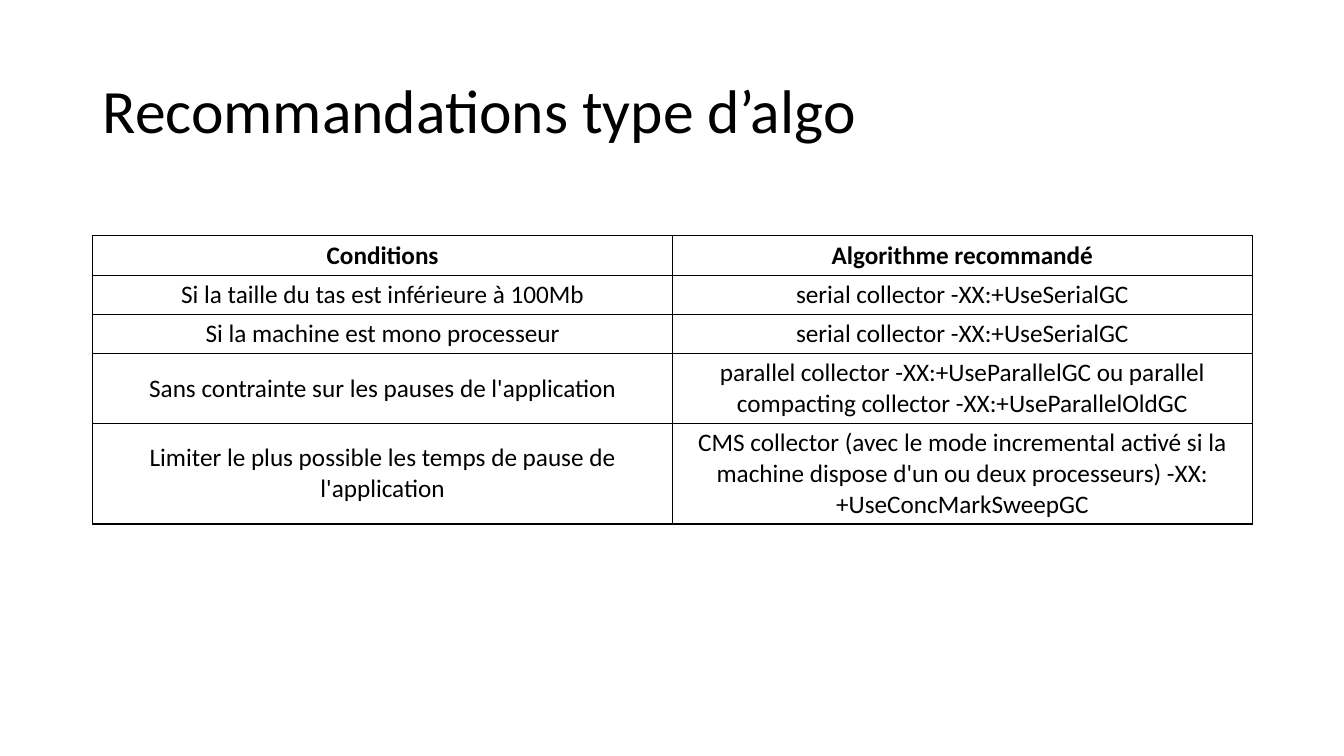
import pptx
import pptx.util
import pptx.dml.color
import pptx.enum.text
import pptx.oxml.ns
import lxml.etree
from dataclasses import dataclass

Inches = pptx.util.Inches
Pt = pptx.util.Pt


@dataclass
class Theme:
    font: str = "Calibri"
    ink: str = "000000"
    title_size: int = 44
    table_size: int = 18
    border_width: int = 1
    cell_margin: float = 0.04


class SlideBuilder:
    def __init__(self, slide, theme):
        self.slide = slide
        self.theme = theme

    def run(self, p, text, size, bold=False):
        r = p.add_run()
        r.text = text
        r.font.name = self.theme.font
        r.font.size = Pt(size)
        r.font.bold = bold
        r.font.color.rgb = pptx.dml.color.RGBColor.from_string(self.theme.ink)

    def title(self, text, left, top, width, height):
        sp = self.slide.shapes.add_textbox(
            Inches(left), Inches(top), Inches(width), Inches(height))
        tf = sp.text_frame
        tf.word_wrap = True
        tf.vertical_anchor = pptx.enum.text.MSO_ANCHOR.MIDDLE
        p = tf.paragraphs[0]
        p.line_spacing = 0.9
        self.run(p, text, self.theme.title_size)

    def borders(self, cell):
        qn = pptx.oxml.ns.qn
        tc_pr = cell._tc.get_or_add_tcPr()
        for side in ("a:lnL", "a:lnR", "a:lnT", "a:lnB"):
            ln = lxml.etree.SubElement(
                tc_pr, qn(side), w=str(Pt(self.theme.border_width)))
            fill = lxml.etree.SubElement(ln, qn("a:solidFill"))
            lxml.etree.SubElement(fill, qn("a:srgbClr"), val=self.theme.ink)

    def cell(self, cell, text, bold):
        self.borders(cell)
        cell.fill.background()
        cell.vertical_anchor = pptx.enum.text.MSO_ANCHOR.MIDDLE
        margin = Inches(self.theme.cell_margin)
        cell.margin_left = cell.margin_right = margin
        cell.margin_top = cell.margin_bottom = margin
        p = cell.text_frame.paragraphs[0]
        p.alignment = pptx.enum.text.PP_ALIGN.CENTER
        self.run(p, text, self.theme.table_size, bold)

    def table(self, rows, heights, left, top, width):
        table = self.slide.shapes.add_table(
            len(rows), len(rows[0]), Inches(left), Inches(top),
            Inches(width), Inches(sum(heights))).table
        table.first_row = False
        table.horz_banding = False
        for i, (texts, height) in enumerate(zip(rows, heights)):
            table.rows[i].height = Inches(height)
            for j, text in enumerate(texts):
                self.cell(table.cell(i, j), text, bold=i == 0)


RECOMMENDATIONS = [
    ("Conditions", "Algorithme recommandé"),
    ("Si la taille du tas est inférieure à 100Mb",
     "serial collector -XX:+UseSerialGC"),
    ("Si la machine est mono processeur",
     "serial collector -XX:+UseSerialGC"),
    ("Sans contrainte sur les pauses de l'application",
     "parallel collector -XX:+UseParallelGC ou parallel compacting "
     "collector -XX:+UseParallelOldGC"),
    ("Limiter le plus possible les temps de pause de l'application",
     "CMS collector (avec le mode incremental activé si la machine dispose "
     "d'un ou deux processeurs) -XX:+UseConcMarkSweepGC"),
]
ROW_HEIGHTS = [0.39, 0.39, 0.39, 0.69, 1.0]


def main():
    prs = pptx.Presentation()
    prs.slide_width = Inches(13.33)
    prs.slide_height = Inches(7.5)
    s = SlideBuilder(prs.slides.add_slide(prs.slide_layouts[6]), Theme())

    # Title
    s.title("Recommandations type d’algo", 0.92, 0.4, 11.5, 1.45)

    # Recommendation table
    s.table(RECOMMENDATIONS, ROW_HEIGHTS, 0.92, 2.34, 11.5)

    prs.save("out.pptx")


if __name__ == "__main__":
    main()
